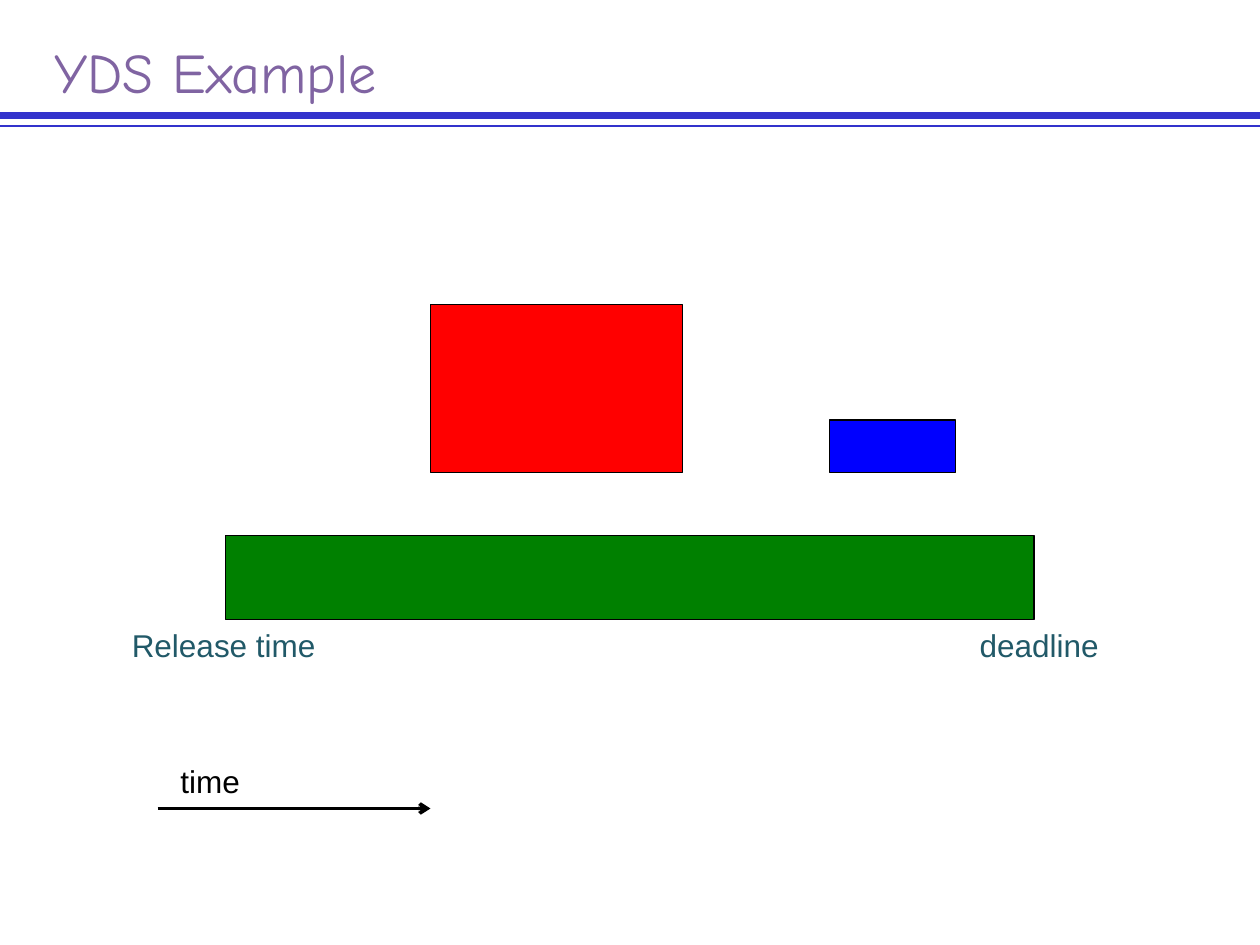
from pptx import Presentation
from pptx.dml.color import RGBColor
from pptx.enum.shapes import MSO_CONNECTOR, MSO_SHAPE
from pptx.enum.text import MSO_ANCHOR, MSO_AUTO_SIZE
from pptx.oxml.ns import qn
from pptx.util import Pt
from lxml.etree import SubElement

RULE = RGBColor(0x33, 0x33, 0xCC)
PURPLE = RGBColor(0x80, 0x64, 0xA2)
TEAL = RGBColor(0x21, 0x59, 0x68)
BLACK = RGBColor(0, 0, 0)
RED = RGBColor(0xFF, 0, 0)
GREEN = RGBColor(0, 0x80, 0)
BLUE = RGBColor(0, 0, 0xFF)


def add_line(s, x1, x2, y, color, width):
    line = s.shapes.add_connector(MSO_CONNECTOR.STRAIGHT, Pt(x1), Pt(y), Pt(x2), Pt(y))
    line.line.color.rgb = color
    line.line.width = Pt(width)
    SubElement(line._element.spPr, qn("a:effectLst"))
    return line


def add_text(s, text, x, y, w, h, font, size, color):
    tf = s.shapes.add_textbox(Pt(x), Pt(y), Pt(w), Pt(h)).text_frame
    p = tf.paragraphs[0]
    p.text = text
    p.font.name = font
    p.font.size = Pt(size)
    p.font.color.rgb = color
    return tf


prs = Presentation()
prs.slide_width, prs.slide_height = Pt(720), Pt(540)
s = prs.slides.add_slide(prs.slide_layouts[6])

add_line(s, 0, 720, 66, RULE, 4.5)
add_line(s, 0, 720, 72, RULE, 0.75)

tf = add_text(s, "YDS Example", 24, 17.5, 660, 42.5, "Comic Neue", 32, PURPLE)
tf.word_wrap = True
tf.vertical_anchor = MSO_ANCHOR.BOTTOM
tf.margin_bottom = 0

for x, y, w, h, color in [
    (246, 174, 144, 96, RED),
    (129, 306, 462, 48, GREEN),
    (474, 240, 72, 30, BLUE),
]:
    sp = s.shapes.add_shape(MSO_SHAPE.RECTANGLE, Pt(x), Pt(y), Pt(w), Pt(h))
    sp.shadow.inherit = False
    sp.fill.solid()
    sp.fill.fore_color.rgb = color
    sp.line.color.rgb = BLACK
    sp.line.width = Pt(0.75)

arrow = add_line(s, 90, 246, 462, BLACK, 2)
SubElement(arrow.line._get_or_add_ln(), qn("a:tailEnd"), type="arrow")

for text, x, y, w, color in [
    ("Release time", 68.2, 354, 120, TEAL),
    ("deadline", 552.7, 354, 83.5, TEAL),
    ("time", 96, 432, 49, BLACK),
]:
    tf = add_text(s, text, x, y, w, 29, "Arial", 18, color)
    tf.word_wrap = False
    tf.auto_size = MSO_AUTO_SIZE.SHAPE_TO_FIT_TEXT

prs.save("out.pptx")
